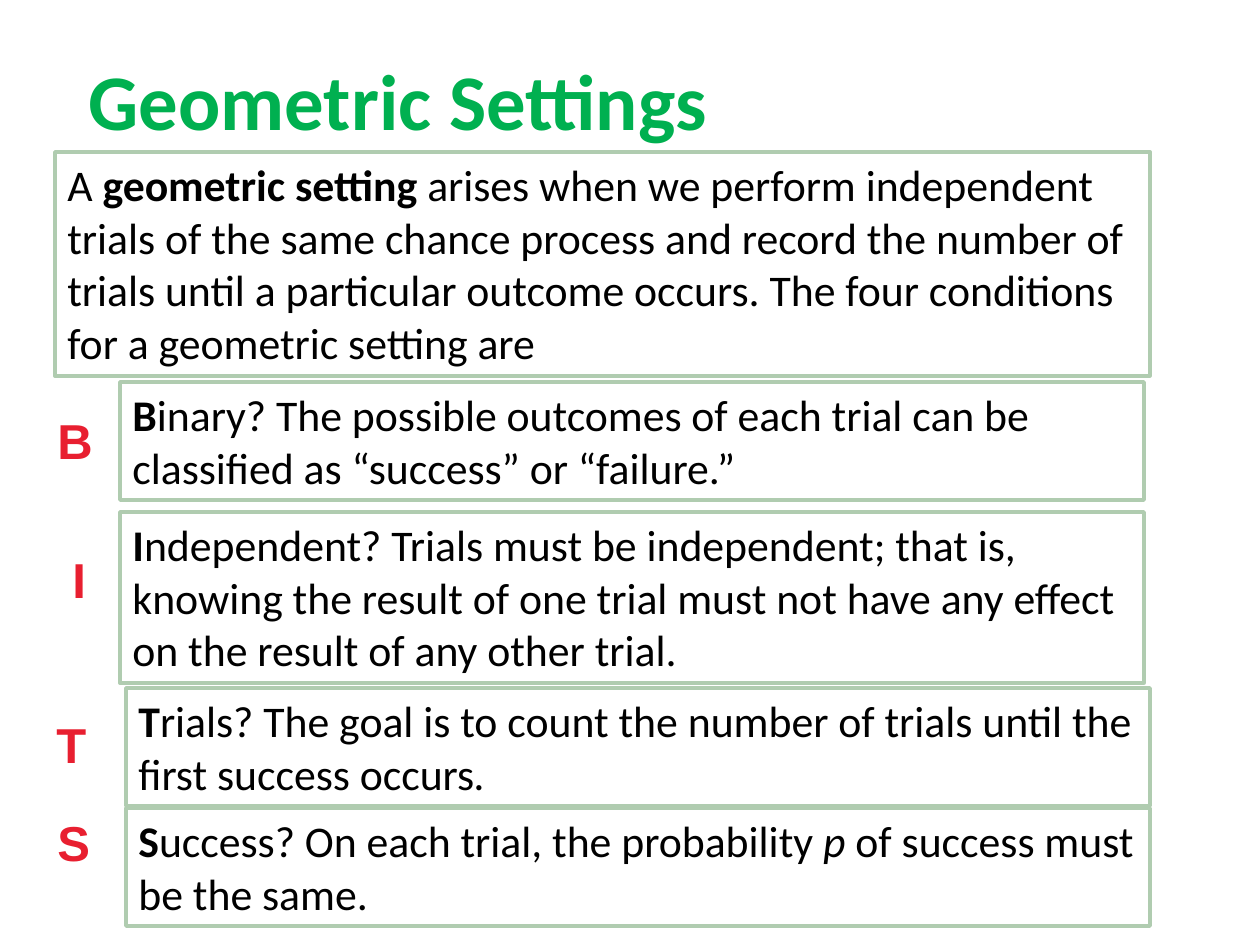
import pptx
import pptx.dml.color
import pptx.enum.shapes
import pptx.enum.text
import pptx.util

PX = 914400 / 126
GREEN, RED, BLACK, WHITE, SAGE = "00B050", "E81F30", "000000", "FFFFFF", "B0CCB0"
ALIGN = pptx.enum.text.PP_ALIGN
ANCHOR = pptx.enum.text.MSO_ANCHOR
AUTO = pptx.enum.text.MSO_AUTO_SIZE

TITLE = dict(size=pptx.util.Pt(45), name="Calibri", bold=True)
BODY = dict(size=pptx.util.Pt(25), name="Calibri")
LETTER = dict(size=pptx.util.Pt(28), name="Arial", bold=True)
B, I = dict(bold=True), dict(italic=True)

# Box position in px, then runs of (text, extra format)
INTRO = ((55, 152, 1095, 224), [
    ("A ", {}), ("geometric setting ", B),
    ("arises when we perform independent trials of the same chance process "
     "and record the number of trials until a particular outcome occurs. "
     "The four conditions for a geometric setting are", {})])

# Each condition: box left, top, height; letter left, top, width; runs
CONDITIONS = [
    ((120, 382, 118), (45, 404, 62), [
        ("B", B), ("inary? The possible outcomes of each trial can be "
                   "classified as “success” or “failure.”", {})]),
    ((120, 512, 171), (60, 543, 39), [
        ("I", B), ("ndependent? Trials must be independent; that is, knowing "
                   "the result of one trial must not have any effect on the "
                   "result of any other trial.", {})]),
    ((126, 688, 118), (44, 708, 55), [
        ("T", B), ("rials? The goal is to count the number of trials until "
                   "the first success occurs", {}), (".", I)]),
    ((126, 808, 118), (45, 806, 58), [
        ("S", B), ("uccess? On each trial, the probability ", {}), ("p ", I),
        ("of success must be the same.", {})]),
]
CONDITION_WIDTH, LETTER_HEIGHT = 1024, 72


def emu(*lengths):
    return [pptx.util.Emu(round(v * PX)) for v in lengths]


def rgb(value):
    return pptx.dml.color.RGBColor.from_string(value)


def write(tf, runs, fmt, color, **frame):
    """Fill the first paragraph with formatted runs."""
    for key, value in frame.items():
        setattr(tf, key, value)
    p = tf.paragraphs[0]
    p.alignment = ALIGN.LEFT
    for text, extra in runs:
        r = p.add_run()
        r.text = text
        for key, value in {**fmt, **extra}.items():
            setattr(r.font, key, value)
        r.font.color.rgb = rgb(color)


def add_title(s, text, box):
    sp = s.shapes.title
    sp.left, sp.top, sp.width, sp.height = emu(*box)
    write(sp.text_frame, [(text, {})], TITLE, GREEN, word_wrap=True,
          vertical_anchor=ANCHOR.MIDDLE, auto_size=AUTO.NONE)


def add_box(s, box, runs):
    sp = s.shapes.add_shape(pptx.enum.shapes.MSO_SHAPE.RECTANGLE, *emu(*box))
    sp.shadow.inherit = False
    sp.fill.solid()
    sp.fill.fore_color.rgb = rgb(WHITE)
    sp.line.color.rgb = rgb(SAGE)
    sp.line.width = pptx.util.Pt(2)
    write(sp.text_frame, runs, BODY, BLACK, word_wrap=True,
          vertical_anchor=ANCHOR.TOP, auto_size=AUTO.SHAPE_TO_FIT_TEXT)


def add_letter(s, box, letter):
    sp = s.shapes.add_textbox(*emu(*box))
    write(sp.text_frame, [(letter, {})], LETTER, RED, word_wrap=False,
          auto_size=AUTO.SHAPE_TO_FIT_TEXT)


def main():
    prs = pptx.Presentation()
    prs.slide_width, prs.slide_height = emu(1260, 945)
    s = prs.slides.add_slide(prs.slide_layouts[5])

    # Title and definition
    add_title(s, "Geometric Settings", (76, 45, 1058, 108))
    add_box(s, *INTRO)

    # The four conditions, then their initials in the margin
    for (left, top, height), _, runs in CONDITIONS:
        add_box(s, (left, top, CONDITION_WIDTH, height), runs)
    for _, (left, top, width), runs in CONDITIONS:
        add_letter(s, (left, top, width, LETTER_HEIGHT), runs[0][0])

    prs.save("out.pptx")


if __name__ == "__main__":
    main()
